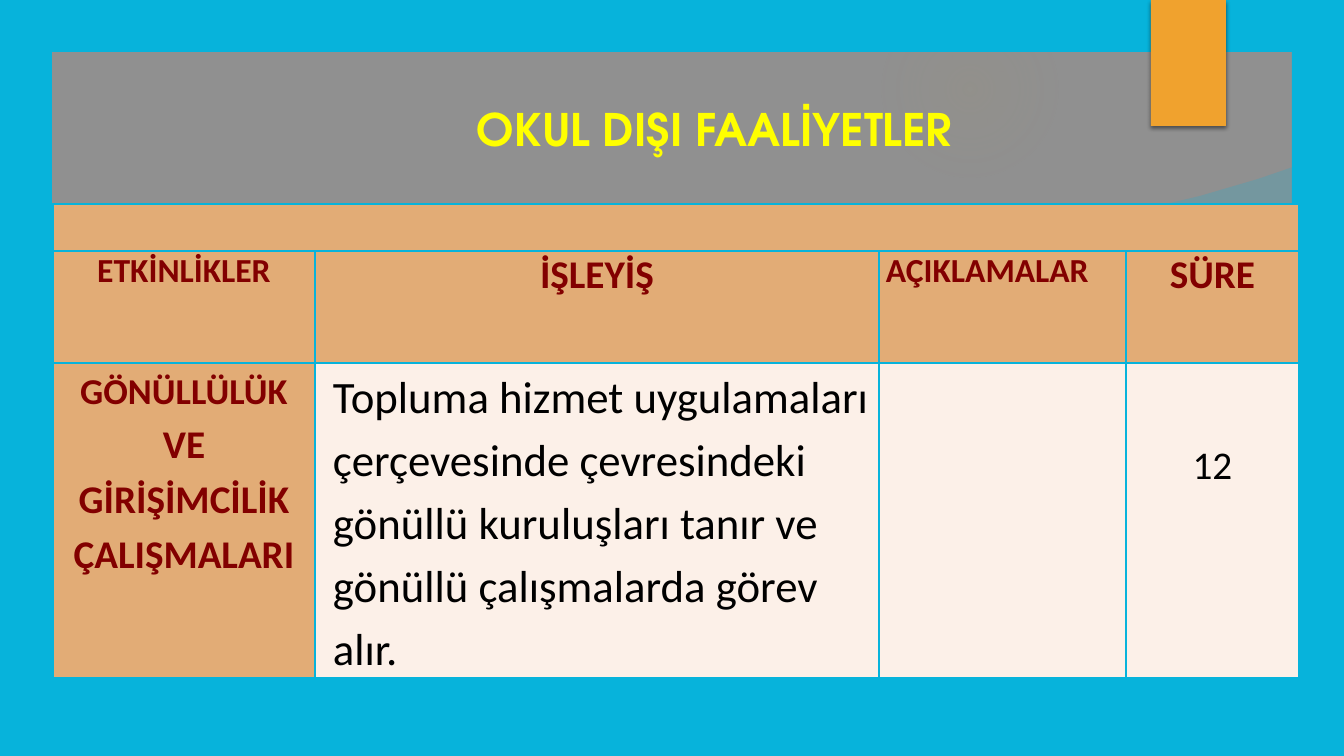
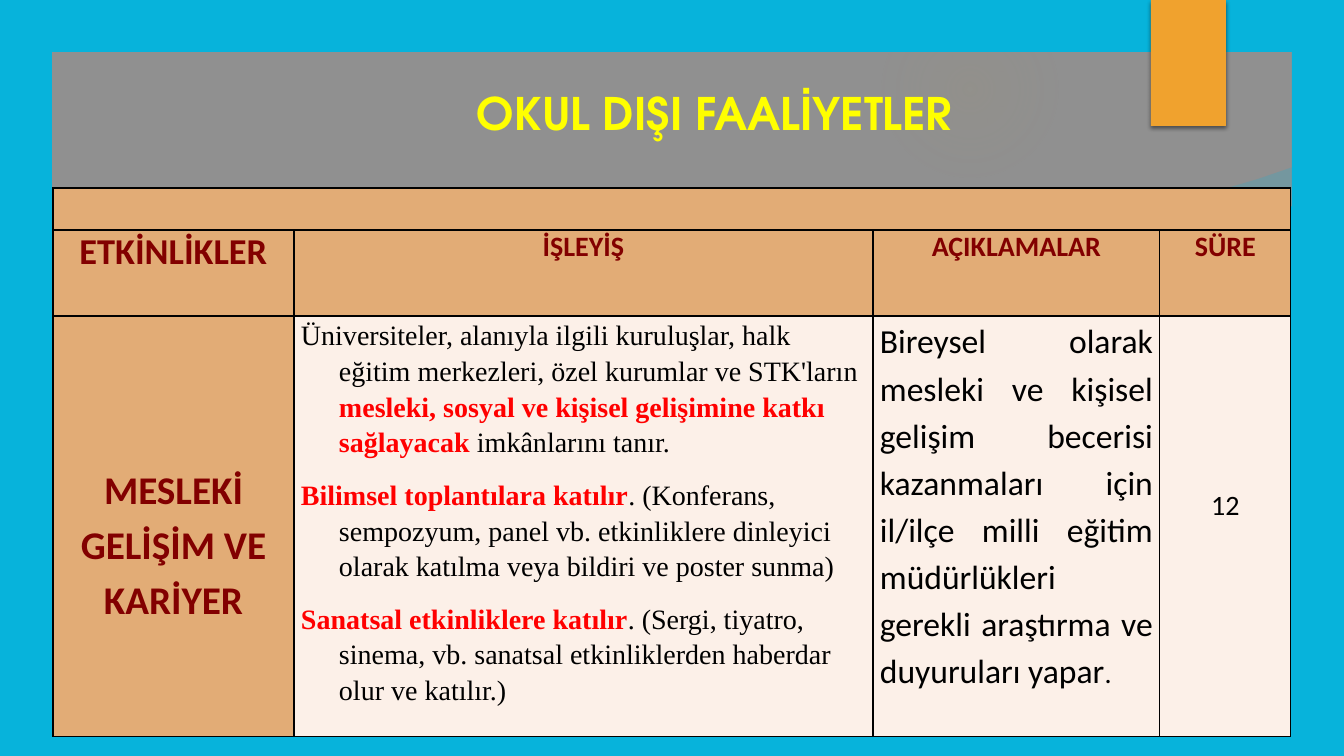
from pptx import Presentation
from pptx.dml.color import RGBColor
from pptx.enum.shapes import MSO_SHAPE
from pptx.enum.text import MSO_ANCHOR, PP_ALIGN
from pptx.oxml import parse_xml
from pptx.oxml.ns import nsdecls
from pptx.util import Emu, Pt

CENTER, LEFT, JUSTIFY = PP_ALIGN.CENTER, PP_ALIGN.LEFT, PP_ALIGN.JUSTIFY
MIDDLE = MSO_ANCHOR.MIDDLE
OVAL, FRAME, RECT = MSO_SHAPE.OVAL, MSO_SHAPE.FRAME, MSO_SHAPE.RECTANGLE

EMU_PER_PX = 914400 / 100.8
W, H, EDGE = 1344, 756, 52
GRAY, BLUE, ORANGE, GLOW = "909090", "07B3DB", "F0A22E", "A19574"
TAN, CREAM, MAROON = "E2AC76", "FCF0E8", "820000"
BLACK, RED, YELLOW = "000000", "FF0000", "FFFF00"
BODY, SERIF, DISPLAY = "Calibri", "Times New Roman", "TeX Gyre Adventor"


def px(n):
    return Emu(round(n * EMU_PER_PX))


def rgb(color):
    return RGBColor.from_string(color)


# Outlines of the background
SWOOSH = [(941, 252), (1040, 248), (1130, 238), (1299, 216), (1293, 167),
          (1258, 179), (1200, 196), (1141, 210), (1084, 223), (1028, 232),
          (957, 243), (937, 245)]
PANEL = [(50, 206), (50, 706), (1294, 706), (1294, 206), (1181, 222),
         (1069, 234), (957, 243), (847, 248), (740, 250), (637, 249),
         (539, 247), (404, 240), (285, 232), (160, 220)]

# Text formats: name, size, bold, colour
HEAD = {"name": BODY, "bold": True, "color": MAROON}
PLAIN = {"name": BODY, "bold": False, "color": BLACK}
SERIF_PLAIN = {"name": SERIF, "size": 20, "bold": False, "color": BLACK}
SERIF_RED = {**SERIF_PLAIN, "bold": True, "color": RED}
TITLE = {"name": DISPLAY, "size": 32, "bold": True, "color": YELLOW}

LABELS = ["ETKİNLİKLER", "İŞLEYİŞ", "AÇIKLAMALAR", "SÜRE"]

# A body cell: top margin, alignment, left margin, indent, paragraphs of runs
SLIDES = [
    {
        "title_top": 77, "table_top": 204, "border": BLUE,
        "cols": [262, 564, 247, 173], "rows": [47, 112, 315],
        "head_sizes": [24, 28, 24, 28],
        "head_aligns": [CENTER, CENTER, LEFT, CENTER],
        "body": [
            (0, CENTER, 0, 0, [[
                ("GÖNÜLLÜLÜK ", {**HEAD, "size": 26}),
                ("VE GİRİŞİMCİLİK ÇALIŞMALARI", {**HEAD, "size": 28})]]),
            (0, LEFT, 11, 0, [[
                ("Topluma hizmet uygulamaları çerçevesinde çevresindeki "
                 "gönüllü kuruluşları tanır ve gönüllü çalışmalarda görev "
                 "alır.", {**PLAIN, "size": 32})]]),
            (0, LEFT, 0, 0, []),
            (72, CENTER, 0, 0, [[("12", {**PLAIN, "size": 28})]]),
        ],
    },
    {
        "title_top": 61, "table_top": 188, "border": BLACK,
        "cols": [241, 579, 287, 131], "rows": [42, 86, 420],
        "head_sizes": [26, 20, 20, 20],
        "head_aligns": [CENTER] * 4,
        "body": [
            (144, CENTER, 0, 0, [[
                ("MESLEKİ GELİŞİM VE KARİYER", {**HEAD, "size": 28})]]),
            (0, LEFT, 38, -38, [
                [("Üniversiteler, alanıyla ilgili kuruluşlar, halk eğitim "
                  "merkezleri, özel kurumlar ve STK'ların ", SERIF_PLAIN),
                 ("mesleki, sosyal ve kişisel gelişimine katkı sağlayacak ",
                  SERIF_RED),
                 ("imkânlarını tanır.", SERIF_PLAIN)],
                [("Bilimsel toplantılara katılır", SERIF_RED),
                 (". (Konferans, sempozyum, panel vb. etkinliklere dinleyici "
                  "olarak katılma veya bildiri ve poster sunma)",
                  SERIF_PLAIN)],
                [("Sanatsal etkinliklere katılır", SERIF_RED),
                 (". (Sergi, tiyatro, sinema, vb. sanatsal etkinliklerden "
                  "haberdar olur ve katılır.)", SERIF_PLAIN)]]),
            (0, JUSTIFY, 0, 0, [[
                ("Bireysel olarak mesleki ve kişisel gelişim becerisi "
                 "kazanmaları için il/ilçe milli eğitim müdürlükleri gerekli "
                 "araştırma ve duyuruları yapar", {**PLAIN, "size": 24}),
                (".", {**PLAIN, "size": 20})]]),
            (168, CENTER, 0, 0, [[("12", {**PLAIN, "size": 20})]]),
        ],
    },
]

prs = Presentation()
prs.slide_width, prs.slide_height = px(W), px(H)

for spec_ in SLIDES:
    s = prs.slides.add_slide(prs.slide_layouts[6])
    s.background.fill.solid()
    s.background.fill.fore_color.rgb = rgb(GRAY)

    # Faint glow in the title band
    glow = s.shapes.add_shape(OVAL, px(882), px(1), px(176), px(176))
    stops = "".join(
        f'<a:gs pos="{pos * 1000}"><a:srgbClr val="{GLOW}">'
        f'<a:alpha val="{alpha * 1000}"/></a:srgbClr></a:gs>'
        for pos, alpha in [(0, 14), (36, 7), (73, 0)])
    glow._element.spPr.insert(2, parse_xml(
        f'<a:gradFill {nsdecls("a")}><a:gsLst>{stops}</a:gsLst>'
        '<a:path path="circle"><a:fillToRect l="50000" t="50000" '
        'r="50000" b="50000"/></a:path></a:gradFill>'))

    # Swoosh, panel, frame and corner tab
    outlines = []
    for points in (SWOOSH, PANEL):
        corners = [(px(x), px(y)) for x, y in points]
        fb = s.shapes.build_freeform(*corners[0], scale=1.0)
        fb.add_line_segments(corners[1:], close=True)
        outlines.append(fb.convert_to_shape())
    swoosh, panel = outlines
    frame = s.shapes.add_shape(FRAME, 0, 0, px(W), px(H))
    frame.adjustments[0] = EDGE / H
    tab = s.shapes.add_shape(RECT, px(1151), 0, px(75), px(126))
    for sp, color in [(swoosh, BLUE), (panel, BLUE), (frame, BLUE),
                      (tab, ORANGE)]:
        sp.fill.solid()
        sp.fill.fore_color.rgb = rgb(color)
    for sp in (glow, swoosh, panel, frame, tab):
        sp.line.fill.background()
        sp.shadow.inherit = False
    swoosh._element.spPr.find(".//{*}srgbClr").append(
        parse_xml(f'<a:alpha {nsdecls("a")} val="20000"/>'))
    tab._element.spPr.find("{*}effectLst").append(parse_xml(
        f'<a:outerShdw {nsdecls("a")} blurRad="{Pt(3)}" dist="{Pt(2)}" '
        f'dir="5400000" rotWithShape="0"><a:srgbClr val="{BLACK}">'
        '<a:alpha val="45000"/></a:srgbClr></a:outerShdw>'))

    # Table grid
    cols, rows = spec_["cols"], spec_["rows"]
    tbl = s.shapes.add_table(len(rows), len(cols), px(53),
                             px(spec_["table_top"]), px(sum(cols)),
                             px(sum(rows))).table
    tbl.first_row = tbl.horz_banding = False
    for i, width in enumerate(cols):
        tbl.columns[i].width = px(width)
    for i, height in enumerate(rows):
        tbl.rows[i].height = px(height)
    for i in range(len(rows)):
        for j in range(len(cols)):
            cell = tbl.cell(i, j)
            tcPr = cell._tc.get_or_add_tcPr()
            for side in "LRTB":
                tcPr.append(parse_xml(
                    f'<a:ln{side} {nsdecls("a")} w="{Pt(1)}"><a:solidFill>'
                    f'<a:srgbClr val="{spec_["border"]}"/></a:solidFill>'
                    f'</a:ln{side}>'))
            cell.fill.solid()
            cell.fill.fore_color.rgb = rgb(CREAM if i == 2 and j else TAN)
    tbl.cell(0, 0).merge(tbl.cell(0, len(cols) - 1))

    # Title box
    tb = s.shapes.add_textbox(px(433), px(spec_["title_top"]), px(563), px(104))
    tb.text_frame.word_wrap = True
    tb.text_frame.vertical_anchor = MIDDLE

    # Text of the title, the header row and the body row
    texts = [(tb.text_frame, CENTER, 0, 0, 1, 0,
              [[("OKUL DIŞI FAALİYETLER", TITLE)]])]
    for j, label in enumerate(LABELS):
        head_run = (label, {**HEAD, "size": spec_["head_sizes"][j]})
        top, align, left, indent, paragraphs = spec_["body"][j]
        head, body = tbl.cell(1, j), tbl.cell(2, j)
        for cell, margin in [(head, 0), (body, top)]:
            cell.margin_left = cell.margin_right = px(7)
            cell.margin_top, cell.margin_bottom = px(margin), 0
        texts.append((head.text_frame, spec_["head_aligns"][j], 0, 0, 1, 12,
                      [[head_run]]))
        texts.append((body.text_frame, align, left, indent, 1.15, 12,
                      paragraphs))
    for tf, align, left, indent, spacing, after, paragraphs in texts:
        for n, runs in enumerate(paragraphs):
            p = tf.add_paragraph() if n else tf.paragraphs[0]
            p.alignment, p.line_spacing = align, spacing
            p.space_after = Pt(after)
            if left:
                pPr = p._p.get_or_add_pPr()
                pPr.set("marL", str(px(left)))
                pPr.set("indent", str(px(indent)))
            for text, fmt in runs:
                r = p.add_run()
                r.text = text
                for key, value in fmt.items():
                    if key == "color":
                        r.font.color.rgb = rgb(value)
                    else:
                        setattr(r.font, key,
                                Pt(value) if key == "size" else value)

prs.save("out.pptx")
